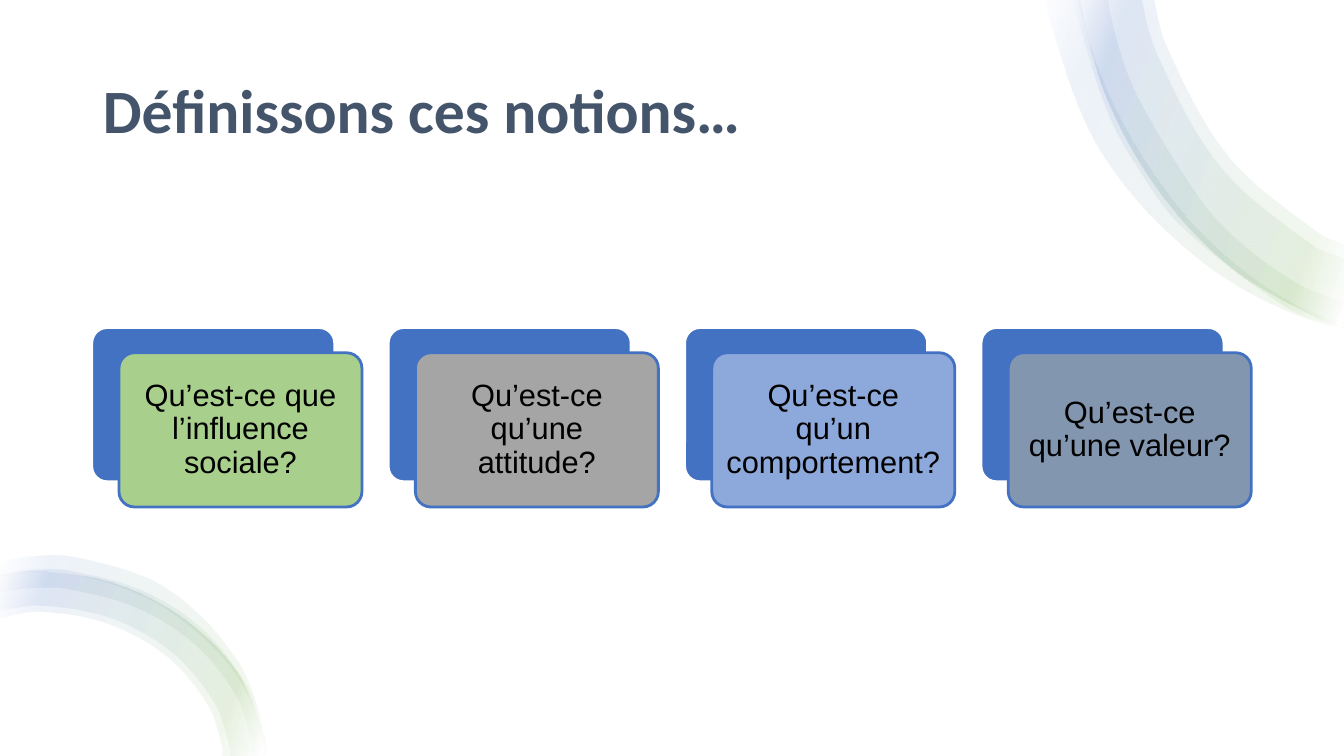
"""Build a slide of four definition questions between two curved ribbons."""
import math
from dataclasses import dataclass

import lxml.etree
import pptx
import pptx.dml.color
import pptx.enum.shapes
import pptx.enum.text
import pptx.oxml.ns
import pptx.util

Point = tuple[float, float]
Inches = pptx.util.Inches
qn = pptx.oxml.ns.qn

COLOURS = {
    "title": "44546A", "text": "000000", "blue": "4372C3", "white": "FFFFFF",
    "green": "A8D08C", "grey": "A5A5A5", "sky": "8DA9DB", "slate": "8296B0",
    "ribbon_green": "70AD47", "ribbon_blue": "4472C4",
}
RIBBON_STOPS = [(0, "white"), (2, "white"), (16, "ribbon_green"), (85, "ribbon_blue"), (100, "white")]
RIBBON_OPACITY = 9
RIBBON_ANGLE = 160
CARD_LEFT, CARD_TOP, CARD_PITCH = 0.91, 3.25, 2.94
CARD_WIDTH, CARD_HEIGHT = 2.41, 1.53
CARD_SHIFT_X, CARD_SHIFT_Y = 0.27, 0.25


@dataclass
class Card:
    """A question and the colour of its front panel."""
    question: str
    colour: str


@dataclass
class Ribbon:
    """A curved band between an outer edge and a returning inner edge."""
    outer: list[Point]
    inner: list[Point]


CARDS = [
    Card("Qu’est-ce que l’influence sociale?", "green"),
    Card("Qu’est-ce qu’une attitude?", "grey"),
    Card("Qu’est-ce qu’un comportement?", "sky"),
    Card("Qu’est-ce qu’une valeur?", "slate"),
]
LOWER_EDGE = [(2.63, 7.5), (2.62, 7.35), (2.36, 6.69), (1.85, 6.16), (1.17, 5.8), (0.4, 5.67), (0, 5.72)]
UPPER_EDGE = [(13.33, 3.25), (13.09, 3.17), (12.23, 2.67), (11.52, 1.93), (10.99, 1), (10.69, -0.03),
              (10.67, -0.16)]
RIBBONS = [
    Ribbon(LOWER_EDGE, [(0, 6.13), (0.4, 6.07), (1.07, 6.19), (1.66, 6.52), (2.06, 7), (2.2, 7.41), (2.2, 7.5)]),
    Ribbon(LOWER_EDGE, [(0, 6.06), (0.4, 6.01), (1.09, 6.13), (1.7, 6.47), (2.12, 6.97), (2.27, 7.4), (2.28, 7.5)]),
    Ribbon([(2.63, 7.5), (2.59, 7.19), (2.47, 6.85), (2.03, 6.27), (1.42, 5.87), (0.69, 5.67), (0.31, 5.66),
            (0, 5.71)],
           [(0, 5.88), (0.33, 5.84), (0.67, 5.85), (1.34, 6.03), (1.92, 6.39), (2.34, 6.91), (2.5, 7.38),
            (2.51, 7.5)]),
    Ribbon([(2.64, 7.5), (2.5, 6.87), (2.33, 6.53), (1.96, 6.09), (1.48, 5.75), (0.71, 5.53), (0.31, 5.53),
            (0, 5.59)],
           [(0, 5.72), (0.32, 5.68), (0.69, 5.7), (1.22, 5.84), (1.71, 6.09), (2.25, 6.58), (2.52, 7.05),
            (2.61, 7.4), (2.62, 7.5)]),
    Ribbon([(13.33, 3.28), (12.82, 3.11), (12.21, 2.8), (11.65, 2.37), (11.16, 1.85), (10.77, 1.23),
            (10.41, 0.19), (10.36, -0.16)],
           [(10.68, -0.16), (10.81, 0.44), (11.06, 1.07), (11.4, 1.66), (11.81, 2.2), (12.3, 2.66),
            (12.86, 3.03), (13.33, 3.21)]),
    Ribbon(UPPER_EDGE, [(11.41, -0.16), (11.58, 0.48), (12.19, 1.56), (13.07, 2.31), (13.33, 2.43)]),
    Ribbon([(13.33, 3.26), (12.79, 3.07), (11.73, 2.26), (11.32, 1.72), (10.99, 1.12), (10.68, 0.13),
            (10.63, -0.16)],
           [(10.96, -0.16), (11.07, 0.37), (11.29, 0.97), (11.95, 2.04), (12.39, 2.48), (12.9, 2.83),
            (13.33, 3.01)]),
    Ribbon(UPPER_EDGE, [(11.29, -0.16), (11.47, 0.52), (12.1, 1.65), (13.01, 2.43), (13.33, 2.57)]),
]


def rgb(name: str) -> pptx.dml.color.RGBColor:
    """Return the named colour."""
    return pptx.dml.color.RGBColor.from_string(COLOURS[name])


def write_text(shape, text: str, *, font: str, size: float, colour: str, bold: bool = False,
               align=pptx.enum.text.PP_ALIGN.LEFT, margins: Point = (0.1, 0.05)) -> None:
    """Put one formatted, vertically centred paragraph in a shape."""
    frame = shape.text_frame
    frame.word_wrap = True
    frame.auto_size = pptx.enum.text.MSO_AUTO_SIZE.NONE
    frame.vertical_anchor = pptx.enum.text.MSO_ANCHOR.MIDDLE
    frame.margin_left = frame.margin_right = Inches(margins[0])
    frame.margin_top = frame.margin_bottom = Inches(margins[1])
    paragraph = frame.paragraphs[0]
    paragraph.alignment = align
    paragraph.line_spacing = 0.9
    run = paragraph.add_run()
    run.text = text
    run.font.name, run.font.size, run.font.bold = font, pptx.util.Pt(size), bold
    run.font.color.rgb = rgb(colour)


def handle(anchor: Point, before: Point, after: Point, reach: float) -> Point:
    """Return a control point a third of the reach along the local tangent."""
    factor = reach / 3 / math.dist(before, after)
    return tuple(p + (r - q) * factor for p, q, r in zip(anchor, before, after))


def curve_edge(lines: list, points: list[Point], left: int, top: int) -> None:
    """Turn the line segments that join the points into smooth curves."""
    padded = [points[0], *points, points[-1]]
    for line, a, b, c, d in zip(lines, padded, padded[1:], padded[2:], padded[3:]):
        reach = math.dist(b, c)
        line.tag = qn("a:cubicBezTo")
        for index, (x, y) in enumerate([handle(b, a, c, reach), handle(c, d, b, reach)]):
            line.insert(index, line.makeelement(
                qn("a:pt"), {"x": str(Inches(x) - left), "y": str(Inches(y) - top)}))


def draw_ribbon(slide, ribbon: Ribbon) -> None:
    """Draw a translucent gradient ribbon."""
    outline = [(Inches(x), Inches(y)) for x, y in ribbon.outer + ribbon.inner]
    builder = slide.shapes.build_freeform(*outline[0])
    builder.add_line_segments(outline[1:], close=True)
    shape = builder.convert_to_shape()
    lines = list(shape._element.iter(qn("a:lnTo")))
    curve_edge(lines, ribbon.outer, shape.left, shape.top)
    curve_edge(lines[len(ribbon.outer):], ribbon.inner, shape.left, shape.top)
    shape.shadow.inherit = False
    shape.line.fill.background()
    shape.fill.gradient()
    shape.fill.gradient_angle = RIBBON_ANGLE
    stops = next(shape._element.iter(qn("a:gsLst")))
    for stop in list(stops):
        stops.remove(stop)
    for position, colour in RIBBON_STOPS:
        stop = lxml.etree.SubElement(stops, qn("a:gs"), pos=str(position * 1000))
        tint = lxml.etree.SubElement(stop, qn("a:srgbClr"), val=COLOURS[colour])
        lxml.etree.SubElement(tint, qn("a:alpha"), val=str(RIBBON_OPACITY * 1000))


def add_panel(slide, left: float, top: float, fill: str, line: str):
    """Add one rounded panel of a card."""
    shape = slide.shapes.add_shape(
        pptx.enum.shapes.MSO_SHAPE.ROUNDED_RECTANGLE,
        Inches(left), Inches(top), Inches(CARD_WIDTH), Inches(CARD_HEIGHT))
    shape.adjustments[0] = 0.1
    shape.shadow.inherit = False
    shape.fill.solid()
    shape.fill.fore_color.rgb = rgb(fill)
    shape.line.color.rgb = rgb(line)
    shape.line.width = pptx.util.Pt(2)
    return shape


def draw_card(slide, card: Card, left: float) -> None:
    """Draw a back panel and the front panel with its question."""
    add_panel(slide, left, CARD_TOP, "blue", "white")
    front = add_panel(slide, left + CARD_SHIFT_X, CARD_TOP + CARD_SHIFT_Y, card.colour, "blue")
    write_text(front, card.question, font="Arial", size=22, colour="text",
               align=pptx.enum.text.PP_ALIGN.CENTER, margins=(0.1, 0.09))


def main() -> None:
    """Build and save the presentation."""
    presentation = pptx.Presentation()
    presentation.slide_width, presentation.slide_height = Inches(13.33), Inches(7.5)
    slide = presentation.slides.add_slide(presentation.slide_layouts[5])
    title = slide.shapes.title
    title.left, title.top, title.width, title.height = map(Inches, (0.92, 0.4, 11.5, 1.45))
    write_text(title, "Définissons ces notions…", font="Calibri", size=44, colour="title", bold=True)
    for ribbon in RIBBONS:
        draw_ribbon(slide, ribbon)
    for index, card in enumerate(CARDS):
        draw_card(slide, card, CARD_LEFT + index * CARD_PITCH)
    presentation.save("out.pptx")


if __name__ == "__main__":
    main()
